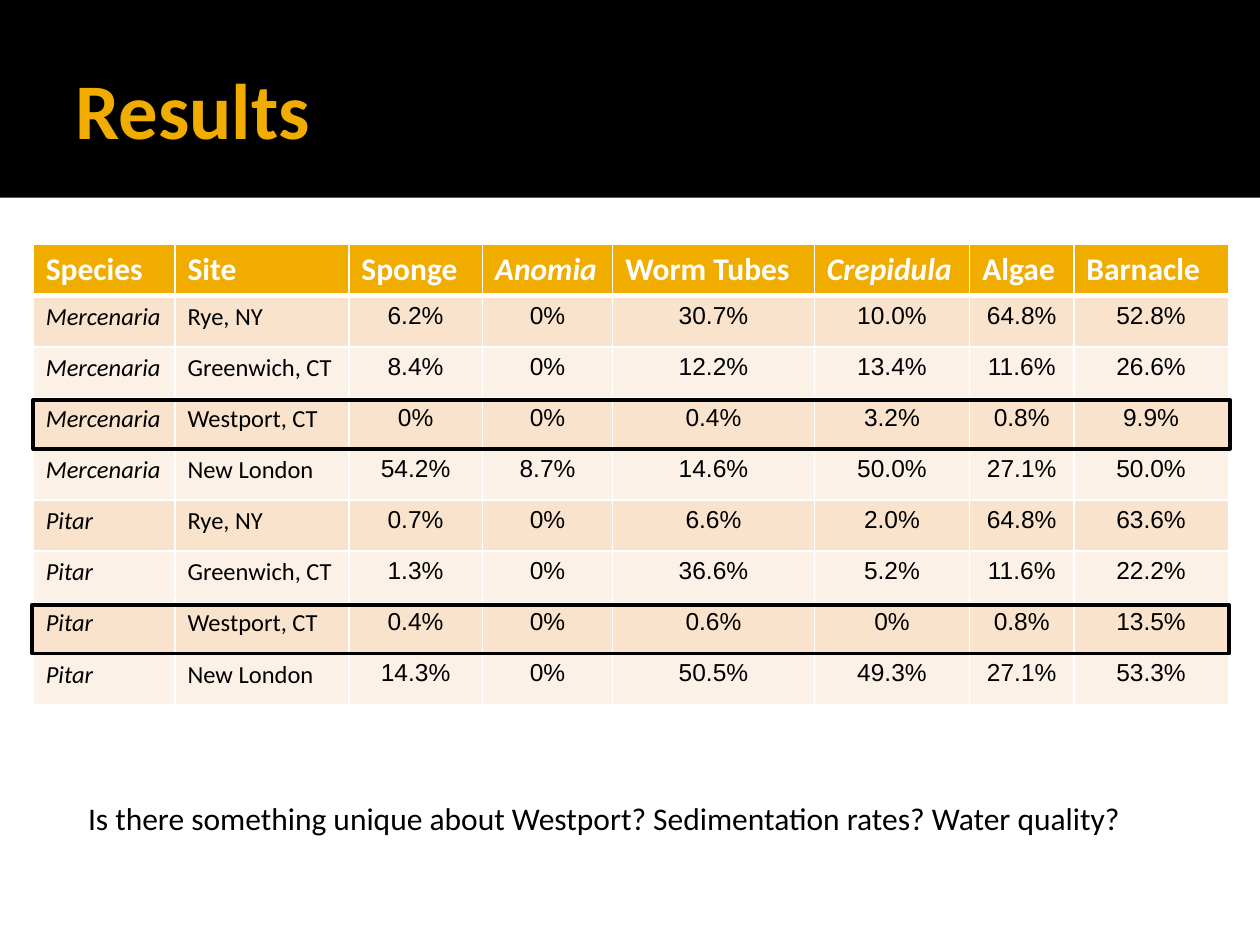
from dataclasses import dataclass

from lxml import etree
from pptx import Presentation
from pptx.dml.color import RGBColor
from pptx.enum import shapes, text
from pptx.oxml import ns
from pptx.util import Pt


@dataclass(frozen=True)
class Theme:
    black: str = "000000"
    white: str = "FFFFFF"
    gold: str = "F0AD00"
    bands: tuple = ("F9E3CC", "FCF1E7")
    heading_font: str = "Calibri"
    figure_font: str = "Arial"
    title_size: float = 45
    header_size: float = 18
    body_size: float = 14


@dataclass(frozen=True)
class Box:
    left: float
    top: float
    width: float
    height: float

    def lengths(self) -> list:
        return [Pt(v) for v in (self.left, self.top, self.width, self.height)]


@dataclass(frozen=True)
class Column:
    heading: str
    width: float
    italic_heading: bool = False
    italic_body: bool = False
    is_figure: bool = True


THEME = Theme()
ROW_HEIGHT = 29.2
TABLE_LEFT, TABLE_TOP = 19, 139.8

COLUMNS = [
    Column("Species", 81, italic_body=True, is_figure=False),
    Column("Site", 99.4, is_figure=False),
    Column("Sponge", 76.3),
    Column("Anomia", 74.5, italic_heading=True),
    Column("Worm Tubes", 115.2),
    Column("Crepidula", 88.8, italic_heading=True),
    Column("Algae", 59.5),
    Column("Barnacle", 88.3),
]
RESULTS = [
    ("Mercenaria", "Rye, NY", "6.2%", "0%", "30.7%", "10.0%", "64.8%", "52.8%"),
    ("Mercenaria", "Greenwich, CT", "8.4%", "0%", "12.2%", "13.4%", "11.6%", "26.6%"),
    ("Mercenaria", "Westport, CT", "0%", "0%", "0.4%", "3.2%", "0.8%", "9.9%"),
    ("Mercenaria", "New London", "54.2%", "8.7%", "14.6%", "50.0%", "27.1%", "50.0%"),
    ("Pitar", "Rye, NY", "0.7%", "0%", "6.6%", "2.0%", "64.8%", "63.6%"),
    ("Pitar", "Greenwich, CT", "1.3%", "0%", "36.6%", "5.2%", "11.6%", "22.2%"),
    ("Pitar", "Westport, CT", "0.4%", "0%", "0.6%", "0%", "0.8%", "13.5%"),
    ("Pitar", "New London", "14.3%", "0%", "50.5%", "49.3%", "27.1%", "53.3%"),
]
HIGHLIGHTS = [Box(19, 228.5, 684, 28), Box(18.3, 345.6, 684, 28)]


def write(frame, words: str, color: str, size: float, font: str = THEME.heading_font,
          align=text.PP_ALIGN.LEFT, **styles) -> None:
    paragraph = frame.paragraphs[0]
    paragraph.alignment = align
    run = paragraph.add_run()
    run.text = words
    run.font.color.rgb = RGBColor.from_string(color)
    for name, value in {"name": font, "size": Pt(size), **styles}.items():
        setattr(run.font, name, value)


def add_words(slide, box: Box, words: str, color: str, size: float,
              frame_format: dict, **styles) -> None:
    frame = slide.shapes.add_textbox(*box.lengths()).text_frame
    for name, value in {"word_wrap": True, **frame_format}.items():
        setattr(frame, name, value)
    write(frame, words, color, size, **styles)


def add_rectangle(slide, box: Box, fill: str = "", line_width: float = 0) -> None:
    rectangle = slide.shapes.add_shape(shapes.MSO_SHAPE.RECTANGLE, *box.lengths())
    rectangle.shadow.inherit = False
    if fill:
        rectangle.fill.solid()
        rectangle.fill.fore_color.rgb = RGBColor.from_string(fill)
    else:
        rectangle.fill.background()
    if line_width:
        rectangle.line.width = Pt(line_width)
        rectangle.line.color.rgb = RGBColor.from_string(THEME.black)
    else:
        rectangle.line.fill.background()


def style_cell(cell, fill: str, top: float, bottom: float) -> None:
    properties = cell._tc.get_or_add_tcPr()
    for side, width in {"L": 1, "R": 1, "T": top, "B": bottom}.items():
        border = etree.SubElement(properties, ns.qn(f"a:ln{side}"), w=str(Pt(width)))
        solid = etree.SubElement(border, ns.qn("a:solidFill"))
        etree.SubElement(solid, ns.qn("a:srgbClr"), val=THEME.white)
    cell.fill.solid()
    cell.fill.fore_color.rgb = RGBColor.from_string(fill)


def add_results(slide) -> None:
    row_count = len(RESULTS) + 1
    area = Box(TABLE_LEFT, TABLE_TOP, sum(c.width for c in COLUMNS), ROW_HEIGHT * row_count)
    results = slide.shapes.add_table(row_count, len(COLUMNS), *area.lengths()).table
    for row in results.rows:
        row.height = Pt(ROW_HEIGHT)

    for c, column in enumerate(COLUMNS):
        results.columns[c].width = Pt(column.width)
        # Heading cell
        heading = results.cell(0, c)
        style_cell(heading, THEME.gold, top=1, bottom=3)
        write(heading.text_frame, column.heading, THEME.white, THEME.header_size,
              bold=True, italic=column.italic_heading)
        # Banded body cells
        for r, record in enumerate(RESULTS):
            entry = results.cell(r + 1, c)
            style_cell(entry, THEME.bands[r % 2], top=1 if r else 3, bottom=1)
            write(entry.text_frame, record[c], THEME.black, THEME.body_size,
                  font=THEME.figure_font if column.is_figure else THEME.heading_font,
                  align=text.PP_ALIGN.CENTER if column.is_figure else text.PP_ALIGN.LEFT,
                  bold=False, italic=column.italic_body)


def main() -> None:
    deck = Presentation()
    deck.slide_width, deck.slide_height = Pt(720), Pt(540)
    slide = deck.slides.add_slide(deck.slide_layouts[6])

    # Title band
    add_rectangle(slide, Box(0, 0, 720, 113), fill=THEME.black)

    # Table of results
    add_results(slide)

    # Title
    add_words(slide, Box(36, 12.5, 648, 98.5), "Results", THEME.gold, THEME.title_size,
              {"vertical_anchor": text.MSO_ANCHOR.MIDDLE, "margin_right": Pt(3.6)}, bold=True)

    # Frames around the Westport rows
    for highlight in HIGHLIGHTS:
        add_rectangle(slide, highlight, line_width=2)

    # Closing question
    add_words(slide, Box(43.2, 453, 614, 29),
              "Is there something unique about Westport? Sedimentation rates? Water quality?",
              THEME.black, THEME.header_size,
              {"auto_size": text.MSO_AUTO_SIZE.SHAPE_TO_FIT_TEXT})

    deck.save("out.pptx")


if __name__ == "__main__":
    main()
